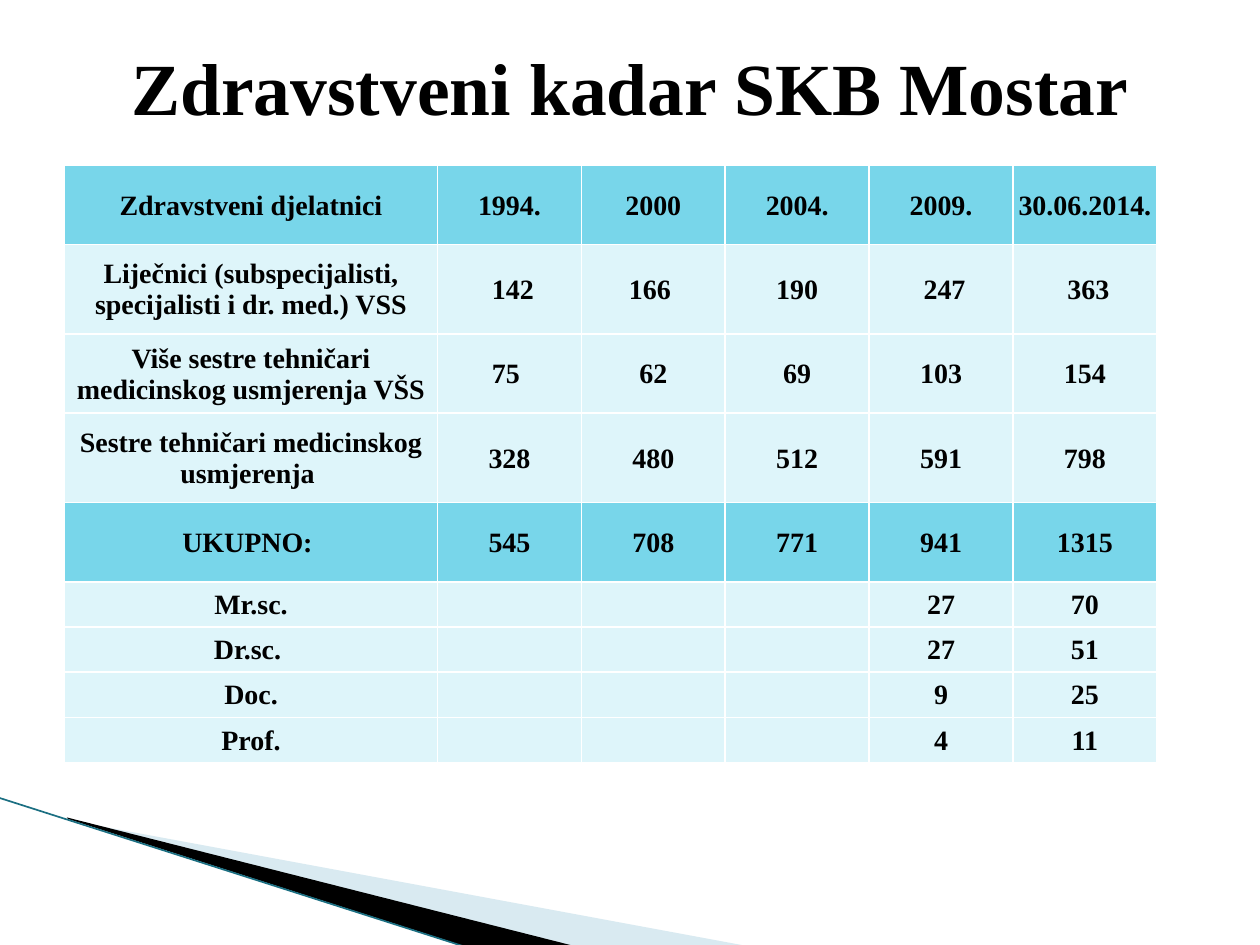
from dataclasses import dataclass

from lxml.etree import SubElement
from pptx import Presentation
from pptx.dml.color import RGBColor as Rgb
from pptx.enum.shapes import MSO_CONNECTOR as Connector
from pptx.enum.text import MSO_ANCHOR as Anchor, PP_ALIGN as Align
from pptx.oxml.ns import qn
from pptx.util import Cm, Pt


@dataclass(frozen=True)
class Theme:
    font: str = "Times New Roman"
    title_size: int = 42
    table_size: int = 16
    text: str = "000000"
    strong_row: str = "78D6EA"
    plain_row: str = "DEF5FA"
    border: str = "FFFFFF"
    pale_wedge: str = "A0CBDC"
    dark_wedge: str = "000000"
    edge: str = "1B6F82"


THEME = Theme()

STAFF = [
    ["Zdravstveni djelatnici", "1994.", "2000", "2004.", "2009.", "30.06.2014."],
    ["Liječnici (subspecijalisti, specijalisti i dr. med.) VSS",
     " 142", "166 ", "190", " 247", " 363"],
    ["Više sestre tehničari medicinskog usmjerenja VŠS",
     "75 ", "62", "69", "103", "154"],
    ["Sestre tehničari medicinskog usmjerenja ", "328", "480", "512", "591", "798"],
    ["UKUPNO: ", "545", "708", "771", "941", "1315"],
    ["Mr.sc.", "", "", "", "27", "70"],
    ["Dr.sc. ", "", "", "", "27", "51"],
    ["Doc.", "", "", "", "9", "25"],
    ["Prof.", "", "", "", "4", "11"],
]
STRONG_ROWS = {0, 4}
COLUMN_WIDTHS = [7.52] + [2.9] * 5
ROW_HEIGHTS = [1.6, 1.8, 1.6, 1.8, 1.6] + [0.91] * 4


def write_text(frame, text, size):
    frame.text = text
    para = frame.paragraphs[0]
    para.alignment = Align.CENTER
    for span in para.runs:
        span.font.name = THEME.font
        span.font.size = Pt(size)
        span.font.bold = True
        span.font.color.rgb = Rgb.from_string(THEME.text)


def add_title(page, text):
    box = page.shapes.add_textbox(Cm(1.27), Cm(0.15), Cm(22.86), Cm(3.18))
    box.text_frame.word_wrap = True
    box.text_frame.vertical_anchor = Anchor.MIDDLE
    write_text(box.text_frame, text, THEME.title_size)


def add_wedge(page, points, color, opacity=100):
    start, *rest = [(Cm(x), Cm(y)) for x, y in points]
    builder = page.shapes.build_freeform(*start)
    builder.add_line_segments(rest, close=True)
    wedge = builder.convert_to_shape()
    wedge.shadow.inherit = False
    wedge.line.fill.background()
    wedge.fill.solid()
    wedge.fill.fore_color.rgb = Rgb.from_string(color)
    if opacity < 100:
        tone = next(wedge.element.iter(qn("a:srgbClr")))
        SubElement(tone, qn("a:alpha"), val=str(opacity * 1000))


def add_edge(page, start, end):
    points = [Cm(value) for value in (*start, *end)]
    edge = page.shapes.add_connector(Connector.STRAIGHT, *points)
    edge.line.color.rgb = Rgb.from_string(THEME.edge)
    edge.line.width = Pt(0.95)
    SubElement(edge.element.spPr, qn("a:effectLst"))


def add_borders(cell):
    properties = cell._tc.get_or_add_tcPr()
    for position, side in enumerate(("lnL", "lnR", "lnT", "lnB")):
        line = SubElement(properties, qn(f"a:{side}"), w=str(Pt(1)))
        fill = SubElement(line, qn("a:solidFill"))
        SubElement(fill, qn("a:srgbClr"), val=THEME.border)
        properties.insert(position, line)


def style_cell(cell, text, color):
    cell.margin_left = cell.margin_right = cell.margin_top = Cm(0.03)
    cell.margin_bottom = 0
    cell.vertical_anchor = Anchor.MIDDLE
    cell.fill.solid()
    cell.fill.fore_color.rgb = Rgb.from_string(color)
    add_borders(cell)
    write_text(cell.text_frame, text, THEME.table_size)


def add_staff_table(page):
    frame = page.shapes.add_table(
        len(STAFF), len(COLUMN_WIDTHS), Cm(1.3), Cm(3.33),
        Cm(sum(COLUMN_WIDTHS)), Cm(sum(ROW_HEIGHTS)))
    table = frame.table
    for column, width in zip(table.columns, COLUMN_WIDTHS):
        column.width = Cm(width)
    for index, (row, height, values) in enumerate(zip(table.rows, ROW_HEIGHTS, STAFF)):
        row.height = Cm(height)
        color = THEME.strong_row if index in STRONG_ROWS else THEME.plain_row
        for cell, value in zip(row.cells, values):
            style_cell(cell, value, color)


def main():
    deck = Presentation()
    deck.slide_width, deck.slide_height = Cm(25.4), Cm(19.05)
    page = deck.slides.add_slide(deck.slide_layouts[6])
    add_wedge(page, [(1.4, 16.54), (15.11, 19.08), (11.58, 19.08), (1.4, 16.51)],
              THEME.pale_wedge, 40)
    add_wedge(page, [(1.35, 16.48), (11.61, 19.08), (9.45, 19.1), (1.37, 16.51)],
              THEME.dark_wedge)
    add_edge(page, (-0.03, 16.08), (9.42, 19.1))
    add_staff_table(page)
    add_title(page, "Zdravstveni kadar SKB Mostar")
    deck.save("out.pptx")


if __name__ == "__main__":
    main()
